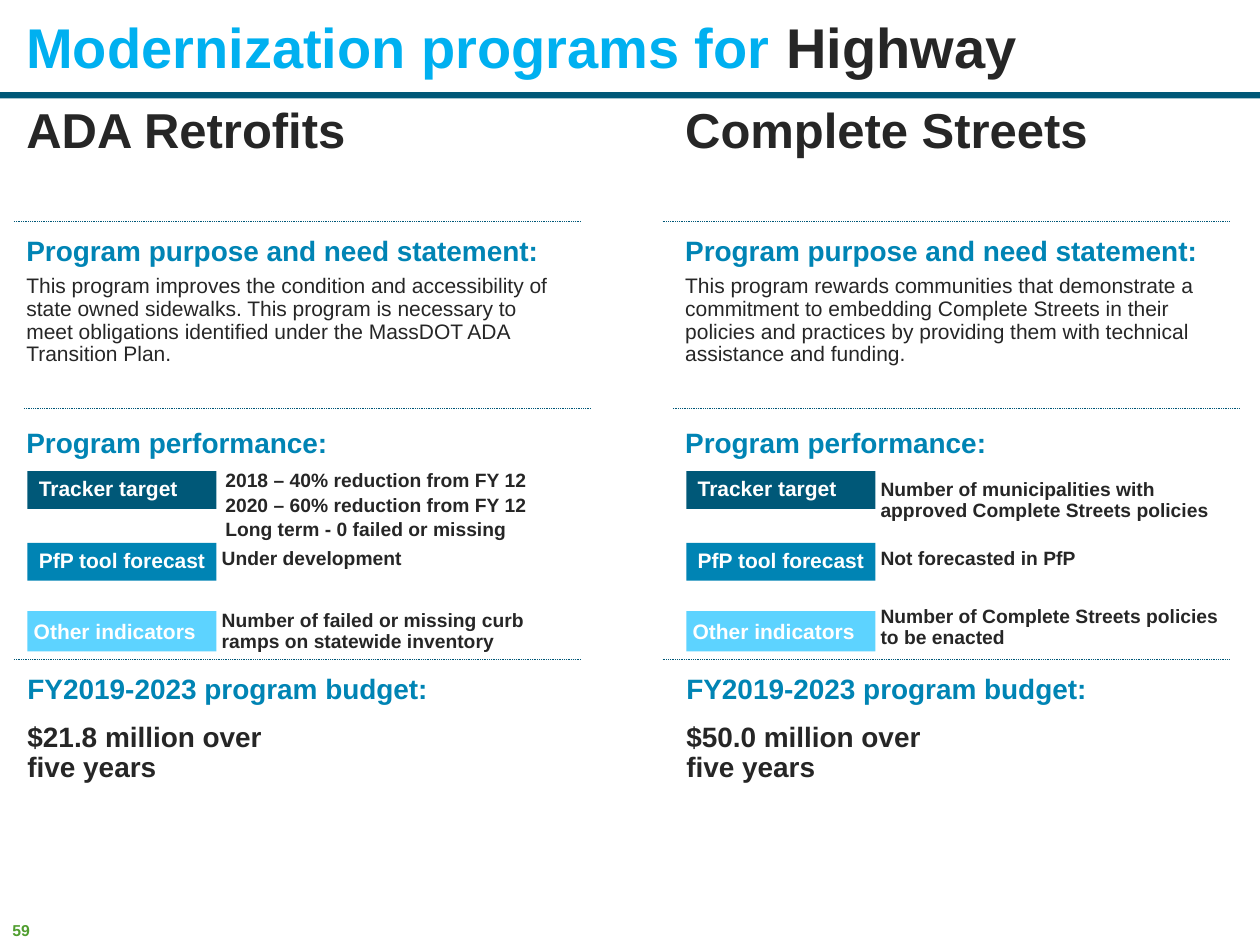
from lxml.etree import SubElement
from pptx import Presentation
from pptx.dml.color import RGBColor
from pptx.enum.dml import MSO_LINE_DASH_STYLE as Dash
from pptx.enum.shapes import MSO_CONNECTOR as Connector, MSO_SHAPE as Shape
from pptx.enum.text import MSO_ANCHOR as Anchor, PP_ALIGN as Align
from pptx.oxml.ns import qn
from pptx.util import Pt

NAVY = RGBColor(0x00, 0x58, 0x78)
TEAL = RGBColor(0x00, 0x84, 0xB4)
SKY = RGBColor(0x5D, 0xD3, 0xFF)
BRIGHT = RGBColor(0x00, 0xB0, 0xF0)
DARK = RGBColor(0x26, 0x26, 0x26)
GREEN = RGBColor(0x50, 0x9E, 0x2F)
WHITE = RGBColor(0xFF, 0xFF, 0xFF)

COLUMN_WIDTH = 324
DETAIL_INSETS = (5, 5, 6.5, 7.2)

PROGRAMS = [
    {
        "left": 8, "rule_left": 8,
        "name": "ADA Retrofits",
        "purpose": "This program improves the condition and accessibility of "
                   "state owned sidewalks. This program is necessary to meet "
                   "obligations identified under the MassDOT ADA Transition Plan.",
        "target": "2018 – 40% reduction from FY 12\n"
                  "2020 – 60% reduction from FY 12\n"
                  "Long term - 0 failed or missing",
        "target_at": (123.8, 264.2),
        "forecast": "Under development",
        "indicator": "Number of failed or missing curb ramps on statewide inventory",
        "indicator_top": 350,
        "budget": "$21.8 million over \vfive years",
    },
    {
        "left": 384.5, "rule_left": 378.7,
        "name": "Complete Streets",
        "purpose": "This program rewards communities that demonstrate a commitment "
                   "to embedding Complete Streets in their policies and practices "
                   "by providing them with technical assistance and funding.",
        "target": "Number of municipalities with approved Complete Streets policies",
        "target_at": (498.2, 269.3),
        "forecast": "Not forecasted in PfP",
        "indicator": "Number of Complete Streets policies to be enacted",
        "indicator_top": 347.8,
        "budget": "$50.0 million over \vfive years",
    },
]


def write_text(frame, text, size=12, color=DARK, bold=True, spacing=0.9, after=0,
               insets=(7.2, 3.6, 7.2, 3.6), anchor=Anchor.TOP, wrap=True, tail="",
               font="Arial"):
    """Fill a frame; \\n parts paragraphs, \\v breaks a line, a tail ends in DARK."""
    frame.word_wrap = wrap
    frame.vertical_anchor = anchor
    (frame.margin_left, frame.margin_top,
     frame.margin_right, frame.margin_bottom) = map(Pt, insets)
    frame.text = text
    for paragraph in frame.paragraphs:
        paragraph.alignment = Align.LEFT
        paragraph.line_spacing = spacing
        paragraph.space_after = Pt(after)
        if tail:
            paragraph.add_run().text = tail
        for run in paragraph.runs:
            run.font.name = font
            run.font.size = Pt(size)
            run.font.bold = bold
            run.font.color.rgb = DARK if tail and run.text == tail else color


class SlideBuilder:
    def __init__(self, slide):
        self.slide = slide

    def text(self, left, top, width, height, text, **style):
        box = self.slide.shapes.add_textbox(Pt(left), Pt(top), Pt(width), Pt(height))
        write_text(box.text_frame, text, **style)

    def bar(self, left, top, width, height, fill, label=None, **style):
        shape = self.slide.shapes.add_shape(
            Shape.RECTANGLE, Pt(left), Pt(top), Pt(width), Pt(height))
        shape.shadow.inherit = False
        shape.fill.solid()
        shape.fill.fore_color.rgb = fill
        shape.line.fill.background()
        if label:
            write_text(shape.text_frame, label, color=WHITE, anchor=Anchor.MIDDLE, **style)

    def rule(self, left, top):
        line = self.slide.shapes.add_connector(
            Connector.STRAIGHT, Pt(left), Pt(top), Pt(left + COLUMN_WIDTH), Pt(top))
        line.line.color.rgb = NAVY
        line.line.width = Pt(0.5)
        line.line.dash_style = Dash.ROUND_DOT
        SubElement(line._element.spPr, qn("a:effectLst"))

    def heading(self, left, top, text, **style):
        self.text(left, top, COLUMN_WIDTH, 18, text, size=16, **style)

    def detail(self, left, top, height, text, **style):
        self.text(left, top, 216, height, text, size=11, insets=DETAIL_INSETS, **style)

    def program(self, program):
        left, rule_left = program["left"], program["rule_left"]
        chip_left, detail_left = left + 7.7, left + 113.7
        self.text(left, 56.9, COLUMN_WIDTH, 69, program["name"], size=28)

        for offset, top in ((0, 126.7), (5.8, 233.3), (0, 376.6)):
            self.rule(rule_left + offset, top)

        self.heading(left, 131.8, "Program purpose and need statement:", color=TEAL)
        self.text(left, 154, COLUMN_WIDTH, 80, program["purpose"], bold=False)

        self.heading(left, 241.9, "Program performance:", color=TEAL)
        for label, top, height, fill, inset, spacing in (
                ("Tracker target", 269.3, 21.6, NAVY, 6.5, 0.9),
                ("PfP tool forecast", 310.3, 21.6, TEAL, 6.5, 0.9),
                ("Other indicators", 349.2, 23, SKY, 3.6, 1)):
            self.bar(chip_left, top, 108, height, fill, label,
                     insets=(inset, 3.6, 0, 3.6), spacing=spacing)
        self.detail(*program["target_at"], 43, program["target"], after=2)
        self.detail(detail_left, 307.4, 50, program["forecast"], spacing=1)
        self.detail(detail_left, program["indicator_top"], 24.5, program["indicator"],
                    anchor=Anchor.MIDDLE, after=2)

        budget_insets = (0, 3.6, 0, 3.6)
        self.heading(chip_left, 382.3, "FY2019-2023 program budget:",
                     color=TEAL, insets=budget_insets)
        self.heading(chip_left, 409.7, program["budget"], insets=budget_insets)


def main():
    presentation = Presentation()
    presentation.slide_width, presentation.slide_height = Pt(720), Pt(540)
    builder = SlideBuilder(presentation.slides.add_slide(presentation.slide_layouts[6]))
    builder.bar(0, 52.6, 720, 3.6, NAVY)
    builder.text(0, 522.7, 26, 18, "59", size=9, color=GREEN, spacing=1, wrap=False)
    builder.text(8, 5.8, 706, 45.4, "Modernization programs for", size=32,
                 color=BRIGHT, anchor=Anchor.MIDDLE, tail=" Highway")
    for program in PROGRAMS:
        builder.program(program)
    presentation.save("out.pptx")


if __name__ == "__main__":
    main()
